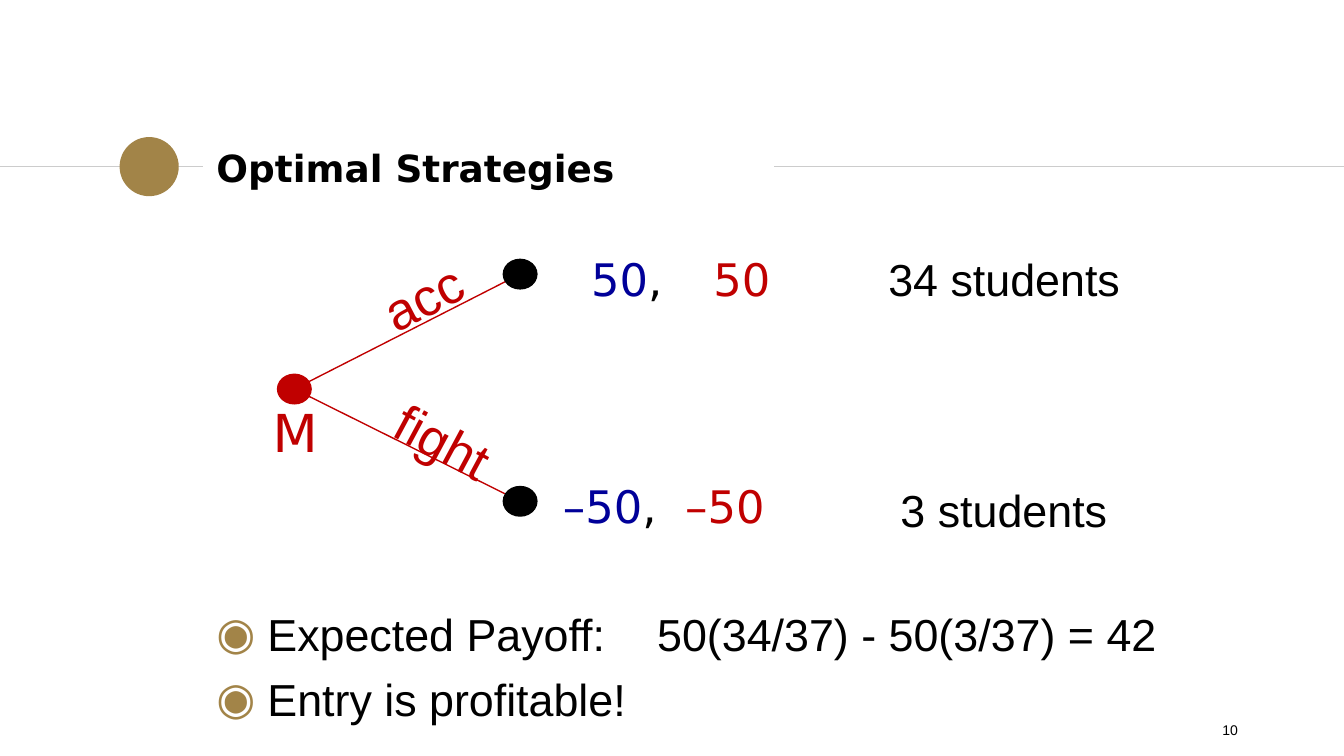
from pptx import Presentation
from pptx import util as u
from pptx.dml.color import RGBColor
from pptx.enum import shapes, text
from pptx.oxml.ns import qn
from lxml import etree

HUES = {"ink": "000000", "red": "C00000", "blue": "000099",
        "gold": "A28448", "rule": "CCCCCC"}
SANS, WIDE = "Arial", "DejaVu Sans"


def hue(name):
    return RGBColor.from_string(HUES[name])


def inch(*nums):
    return [u.Inches(n) for n in nums]


def style(run, size, font, color="ink", bold=False):
    run.font.size = u.Pt(size)
    run.font.name = font
    run.font.bold = bold
    run.font.color.rgb = hue(color)


def place(shape, box):
    shape.left, shape.top, shape.width, shape.height = inch(*box)


def pad(frame, gap):
    frame.margin_left = frame.margin_right = u.Inches(gap)
    frame.margin_top = frame.margin_bottom = u.Inches(gap)
    frame.word_wrap = True
    frame.auto_size = text.MSO_AUTO_SIZE.NONE


def add_tab(para, pos):
    tabs = etree.SubElement(para._p.get_or_add_pPr(), qn("a:tabLst"))
    etree.SubElement(tabs, qn("a:tab"), pos=str(u.Inches(pos)), algn="l")


def label(slide, box, parts, size, font, turn=0):
    """Add a one-line text box; parts are (words, color) pairs."""
    shape = slide.shapes.add_textbox(*inch(*box))
    shape.rotation = turn
    shape.text_frame.word_wrap = True
    para = shape.text_frame.paragraphs[0]
    for words, color in parts:
        run = para.add_run()
        run.text = words
        style(run, size, font, color)
    return para


def line(slide, start, end, color):
    rule = slide.shapes.add_connector(
        shapes.MSO_CONNECTOR.STRAIGHT, *inch(*start, *end))
    rule.line.color.rgb = hue(color)
    rule.line.width = u.Pt(0.75)
    etree.SubElement(rule._element.spPr, qn("a:effectLst"))


def dot(slide, mid, wide, high, color, edge=True):
    x, y = mid
    oval = slide.shapes.add_shape(
        shapes.MSO_SHAPE.OVAL, *inch(x - wide / 2, y - high / 2, wide, high))
    oval.shadow.inherit = False
    oval.fill.solid()
    oval.fill.fore_color.rgb = hue(color)
    if edge:
        oval.line.color.rgb = hue(color)
        oval.line.width = u.Pt(0.75)
    else:
        oval.line.fill.background()


def header(slide, box):
    x, y, wide, high = box
    mid = y + 0.23
    line(slide, (0, mid), (x, mid), "rule")
    line(slide, (x + wide + 0.01, mid), (10, mid), "rule")
    dot(slide, (x - 0.4, mid), 0.44, 0.44, "gold", edge=False)

    title = slide.shapes.title
    place(title, box)
    frame = title.text_frame
    frame.text = "Optimal Strategies"
    pad(frame, 0.1)
    frame.vertical_anchor = text.MSO_ANCHOR.MIDDLE
    para = frame.paragraphs[0]
    para.alignment = text.PP_ALIGN.LEFT
    style(para.runs[0], 20, WIDE, bold=True)


def body(slide, box):
    # words, space before, left indent, bullet, tab stop
    rows = [("34 students", 5, 5, False, None),
            ("3 students", 95, 5.09, False, None),
            ("Expected Payoff:\t50(34/37) - 50(3/37) = 42", 38, 0.38, True, 3.28),
            ("Entry is profitable!", 6, 0.38, True, None)]
    shape = slide.placeholders[1]
    place(shape, box)
    frame = shape.text_frame
    frame.text = "\n".join(row[0] for row in rows)
    pad(frame, 0.1)
    for para, (_, gap, left, mark, tab) in zip(frame.paragraphs, rows):
        para.space_before = u.Pt(gap)
        prop = para._p.get_or_add_pPr()
        prop.set("marL", str(u.Inches(left)))
        prop.set("indent", str(u.Inches(-left if mark else 0)))
        if mark:
            tint = etree.SubElement(prop, qn("a:buClr"))
            etree.SubElement(tint, qn("a:srgbClr"), val=HUES["gold"])
            etree.SubElement(prop, qn("a:buChar"), char="◉")
        else:
            etree.SubElement(prop, qn("a:buNone"))
        if tab:
            add_tab(para, tab)
        for run in para.runs:
            style(run, 24, SANS)


def tree(slide, box):
    x, y, wide, high = box
    root = (x, y + high / 2 + 0.01)
    ends = [(x + wide, y), (x + wide, y + high)]

    # Branches, then nodes on top
    for end in ends:
        line(slide, root, end, "red")
    for mid, color in zip([root] + ends, ["red", "ink", "ink"]):
        dot(slide, mid, 0.25, 0.22, color)

    # Player and move names
    label(slide, (x - 0.26, y + 0.89, 0.59, 0.54), [("M", "red")], 28, WIDE)
    label(slide, (x + 0.54, y - 0.16, 1, 0.54), [("acc", "red")],
          28, SANS, 332.5)
    label(slide, (x + 0.64, y + 1.01, 1.15, 0.54), [("fight", "red")],
          28, SANS, 28.2)

    # Payoffs
    for left, top, pay in [(2.11, -0.22, "50"), (1.9, 1.47, "–50")]:
        para = label(slide, (x + left, y + top, 3.85, 0.51),
                     [(pay, "blue"), (",\t", "ink"), (pay, "red")], 24, WIDE)
        add_tab(para, 0.91)


def footer(slide, box):
    para = label(slide, box, [("10", "ink")], 7.5, SANS)
    para.alignment = text.PP_ALIGN.RIGHT


def main():
    deck = Presentation()
    deck.slide_width = u.Inches(10)
    deck.slide_height = deck.slide_width * 9 // 16
    slide = deck.slides.add_slide(deck.slide_layouts[1])
    header(slide, (1.51, 1.01, 4.24, 0.48))
    body(slide, (1.51, 1.77, 7.45, 3.7))
    tree(slide, (2.19, 2.04, 1.68, 1.69))
    footer(slide, (7.06, 5.32, 2.25, 0.22))
    deck.save("out.pptx")


if __name__ == "__main__":
    main()
